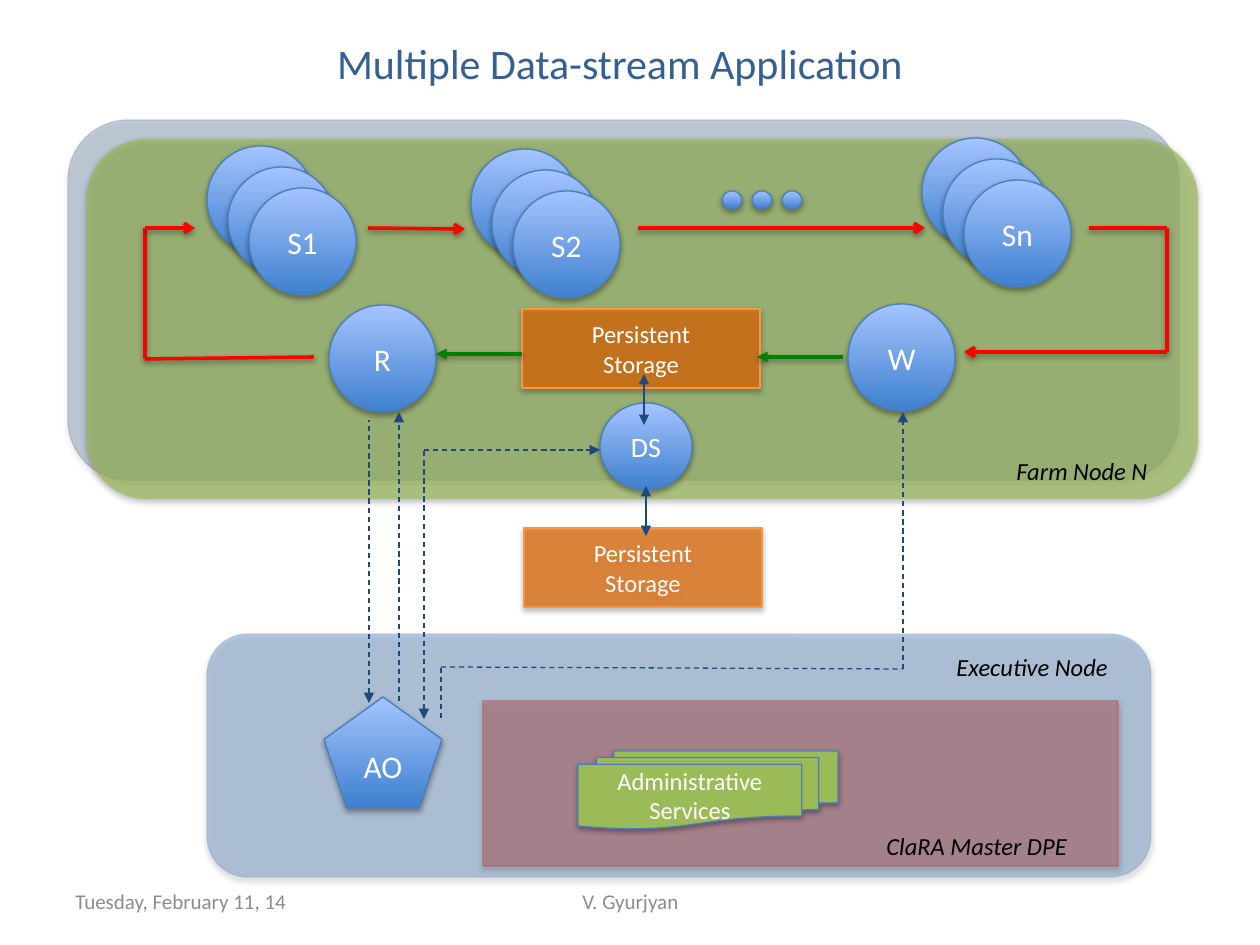
from dataclasses import dataclass
from itertools import pairwise
from pptx import Presentation
from pptx.dml.color import RGBColor
from pptx.enum.dml import MSO_LINE
from pptx.enum.shapes import MSO_CONNECTOR, MSO_SHAPE
from pptx.enum.text import MSO_ANCHOR, PP_ALIGN
from pptx.oxml.ns import qn
from pptx.oxml.xmlchemy import OxmlElement
from pptx.util import Emu, Pt

SCALE = 914400 / 126
LEFT, CENTER = PP_ALIGN.LEFT, PP_ALIGN.CENTER
TOP, MIDDLE = MSO_ANCHOR.TOP, MSO_ANCHOR.MIDDLE
DASH, STRAIGHT = MSO_LINE.DASH, MSO_CONNECTOR.STRAIGHT
ROUND, RECT, OVAL = MSO_SHAPE.ROUNDED_RECTANGLE, MSO_SHAPE.RECTANGLE, MSO_SHAPE.OVAL
PENTAGON, DOCS = MSO_SHAPE.REGULAR_PENTAGON, MSO_SHAPE.FLOWCHART_MULTIDOCUMENT


@dataclass(frozen=True)
class Theme:
    font: str = "Calibri"
    title: str = "376092"
    white: str = "FFFFFF"
    black: str = "000000"
    gray: str = "8C8C8C"
    navy: str = "1F497D"
    blue: str = "4F81BD"
    edge: str = "4B7EBC"
    deep: str = "3F80CE"
    pale: str = "A4C4FF"
    lime: str = "9BBB59"
    wine: str = "C0504D"
    amber: str = "E46C0A"
    rim: str = "F79646"
    red: str = "FF0000"
    green: str = "008000"
    head_size: int = 24
    node_size: int = 18
    hub_size: int = 16
    text_size: int = 14
    foot_size: int = 12
    thin: float = 0.75
    thick: float = 2


T = Theme()


def px(*nums):
    return [Emu(round(n * SCALE)) for n in nums]


def rgb(code):
    return RGBColor.from_string(code)


def apply(item, values):
    for name, value in values.items():
        setattr(item, name, value)


def child(parent, tag, **attrs):
    node = OxmlElement(tag)
    for name, value in attrs.items():
        node.set(name, str(value))
    parent.append(node)
    return node


def shade(shape, alpha, dist):
    props = shape._element.spPr
    effect = child(props, "a:effectLst")
    if alpha:
        drop = child(effect, "a:outerShdw", blurRad=40000, dist=dist, dir=5400000, rotWithShape=0)
        color = child(drop, "a:srgbClr", val=T.black)
        child(color, "a:alpha", val=alpha * 1000)


def write(shape, words, size, color, align=CENTER, anchor=MIDDLE, wrap=True, italic=False):
    frame = shape.text_frame
    frame.text = words
    apply(frame, {"word_wrap": wrap, "vertical_anchor": anchor})
    for para in frame.paragraphs:
        para.alignment = align
        for run in para.runs:
            apply(run.font, {"name": T.font, "size": Pt(size), "italic": italic})
            run.font.color.rgb = rgb(color)


def block(slide, kind, box, fill, edge, words="", size=T.text_size, alphas=()):
    shape = slide.shapes.add_shape(kind, *px(*box))
    if fill:
        shape.fill.solid()
        shape.fill.fore_color.rgb = rgb(fill)
    else:
        shape.fill.gradient()
        shape.fill.gradient_angle = 90
        for stop, color in zip(shape.fill.gradient_stops, (T.deep, T.pale)):
            stop.color.rgb = rgb(color)
    shape.line.color.rgb = rgb(edge)
    shape.line.width = Pt(T.thin)
    for color, alpha in zip(list(shape._element.spPr.iter(qn("a:srgbClr"))), alphas):
        child(color, "a:alpha", val=alpha * 1000)
    shade(shape, 35, 23000)
    if words:
        write(shape, words, size, T.white)


def node(slide, box, words="", size=T.node_size, kind=OVAL):
    block(slide, kind, box, None, T.edge, words, size)


def stack(slide, left, top, words):
    for step in range(0, 63, 21):
        node(slide, (left + step, top + step, 107, 107), words)


def store(slide, left, top):
    block(slide, RECT, (left, top, 238, 79), T.amber, T.rim, "Persistent\nStorage", alphas=(73,))


def label(slide, box, words, **looks):
    write(slide.shapes.add_textbox(*px(*box)), words, **looks)


def route(slide, points, color, width=T.thin, dash=None, head=None, tail=None, shadow=0):
    legs = list(pairwise(points))
    for spot, (start, end) in enumerate(legs):
        wire = slide.shapes.add_connector(STRAIGHT, *px(*start, *end))
        wire.line.color.rgb = rgb(color)
        apply(wire.line, {"width": Pt(width), "dash_style": dash})
        ends = wire.line._get_or_add_ln()
        if head and spot == 0:
            child(ends, "a:headEnd", type=head)
        if tail and spot == len(legs) - 1:
            child(ends, "a:tailEnd", type=tail)
        shade(wire, shadow, 20000)


def panels(slide):
    for kind, box, fill, edge, alphas in (
        (ROUND, (68, 120, 1111, 360), T.navy, T.navy, (23, 18)),
        (ROUND, (87, 139, 1111, 360), T.lime, T.lime, (66, 18)),
        (ROUND, (207, 634, 944, 243), T.blue, T.edge, (36, 18)),
        (RECT, (483, 701, 635, 165), T.wine, T.wine, (40, 59)),
    ):
        block(slide, kind, box, fill, edge, alphas=alphas)


def nodes(slide):
    node(slide, (329, 305, 107, 107), "R")
    node(slide, (848, 304, 107, 107), "W")
    node(slide, (324, 697, 118, 111), "AO", kind=PENTAGON)
    block(slide, DOCS, (578, 751, 260, 78), T.lime, T.edge, "Administrative\nServices")
    for left, top, words in ((207, 146, "S1"), (471, 149, "S2"), (922, 138, "Sn")):
        stack(slide, left, top, words)
    for spot in range(3):
        node(slide, (722 + 30 * spot, 191, 20, 18))
    store(slide, 522, 309)
    node(slide, (600, 403, 92, 87), "DS", T.hub_size)
    store(slide, 524, 528)


def flows(slide):
    bold = {"width": T.thick, "shadow": 38}
    for points in (
        [(314, 357), (145, 359), (145, 228), (195, 228)],
        [(368, 228), (465, 229)],
        [(638, 228), (925, 228)],
        [(1089, 228), (1167, 228), (1167, 352), (964, 352)],
    ):
        route(slide, points, T.red, tail="arrow", **bold)
    for points in ([(757, 357), (843, 357)], [(436, 354), (522, 354)]):
        route(slide, points, T.green, head="triangle", **bold)
    for points, head, tail in (
        ([(399, 701), (399, 412)], None, "triangle"),
        ([(369, 703), (369, 420)], "triangle", None),
        ([(441, 718), (441, 667), (903, 669), (903, 412)], None, "triangle"),
        ([(424, 719), (424, 450), (600, 450)], "triangle", "triangle"),
    ):
        route(slide, points, T.navy, dash=DASH, head=head, tail=tail)
    for points in ([(646, 486), (646, 536)], [(644, 374), (644, 425)]):
        route(slide, points, T.navy, head="triangle", tail="triangle")


def labels(slide):
    note = {"size": T.text_size, "color": T.black, "align": LEFT,
            "anchor": TOP, "wrap": False, "italic": True}
    for box, words in (
        ((874, 825, 214, 43), "ClaRA Master DPE"),
        ((944, 646, 184, 43), "Executive Node"),
        ((1004, 450, 164, 43), "Farm Node N"),
    ):
        label(slide, box, words, **note)
    foot = {"size": T.foot_size, "color": T.gray}
    label(slide, (63, 876, 294, 50), "Tuesday, February 11, 14", align=LEFT, **foot)
    label(slide, (431, 876, 399, 50), "V. Gyurjyan", **foot)


def main():
    deck = Presentation()
    deck.slide_width, deck.slide_height = px(1260, 945)
    slide = deck.slides.add_slide(deck.slide_layouts[5])
    title = slide.shapes.title
    apply(title, dict(zip(("left", "top", "width", "height"), px(53, 10, 1134, 106))))
    write(title, "Multiple Data-stream Application", T.head_size, T.title)
    panels(slide)
    nodes(slide)
    flows(slide)
    labels(slide)
    deck.save("out.pptx")


if __name__ == "__main__":
    main()
